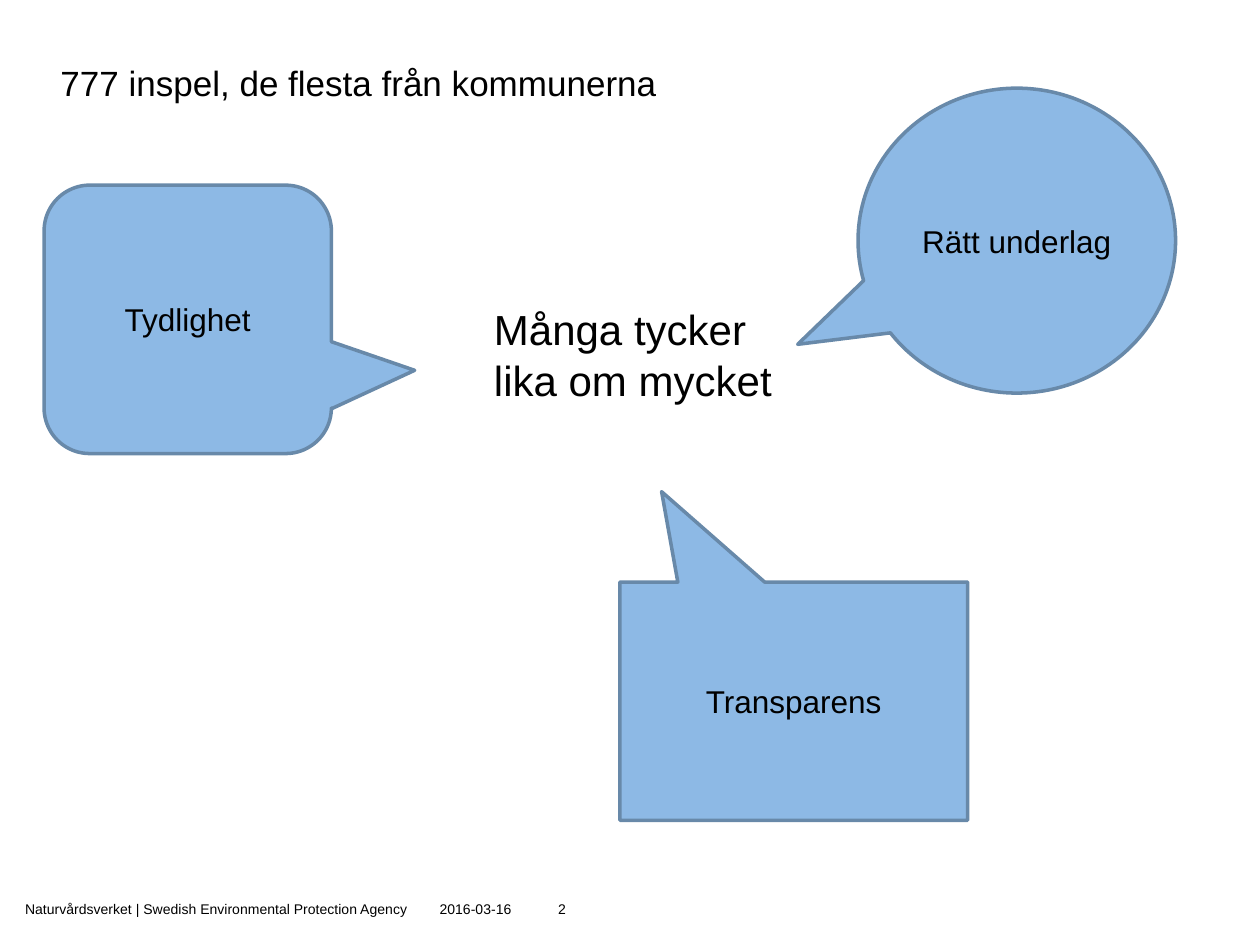
from pptx import Presentation
from pptx.dml.color import RGBColor
from pptx.enum.shapes import MSO_SHAPE
from pptx.enum.text import MSO_ANCHOR, MSO_AUTO_SIZE, PP_ALIGN
from pptx.util import Inches, Pt
from lxml.etree import SubElement
from pptx.oxml.ns import qn


def color(code):
    return RGBColor.from_string(code)


def write(shape, box, text, size, align=PP_ALIGN.LEFT, anchor=MSO_ANCHOR.MIDDLE):
    shape.left, shape.top, shape.width, shape.height = [Inches(v) for v in box]
    frame = shape.text_frame
    frame.text = text
    frame.word_wrap = True
    frame.auto_size = MSO_AUTO_SIZE.NONE
    frame.vertical_anchor = anchor
    para = frame.paragraphs[0]
    para.alignment = align
    para.space_before = Pt(0)
    font = para.runs[0].font
    font.name = "Arial"
    font.size = Pt(size)
    font.color.rgb = color("000000")


deck = Presentation()
deck.slide_width, deck.slide_height = Inches(10), Inches(7.5)
slide = deck.slides.add_slide(deck.slide_layouts[1])
shapes = slide.shapes

write(shapes.title, (0.38, 0.44, 5.63, 0.44),
      "777 inspel, de flesta från kommunerna", 20, anchor=MSO_ANCHOR.TOP)

body = slide.placeholders[1]
write(body, (3.82, 1.86, 2.52, 2.36), "Många tycker lika om mycket", 24,
      anchor=MSO_ANCHOR.TOP)
body.text_frame.margin_top = Inches(0.55)
props = body.text_frame.paragraphs[0]._p.get_or_add_pPr()
props.set("marL", "0")
props.set("indent", "0")
SubElement(props, qn("a:buNone"))

notes = [
    (0.1, 3.32, "Naturvårdsverket | Swedish Environmental Protection Agency", PP_ALIGN.LEFT),
    (3.39, 0.82, "2016-03-16", PP_ALIGN.LEFT),
    (4.2, 0.39, "2", PP_ALIGN.RIGHT),
]
for left, width, text, align in notes:
    write(shapes.add_textbox(0, 0, 0, 0), (left, 7.07, width, 0.28), text, 8, align)

calls = [
    (MSO_SHAPE.ROUNDED_RECTANGULAR_CALLOUT, (0.35, 1.47, 2.28, 2.13),
     (0.79, 0.19, 0.17), "Tydlighet"),
    (MSO_SHAPE.OVAL_CALLOUT, (6.81, 0.7, 2.52, 2.42), (-0.69, 0.34), "Rätt underlag"),
    (MSO_SHAPE.RECTANGULAR_CALLOUT, (4.92, 4.62, 2.76, 1.89),
     (-0.38, -0.88), "Transparens"),
]
for kind, box, tips, text in calls:
    call = shapes.add_shape(kind, 0, 0, 0, 0)
    write(call, box, text, 18, PP_ALIGN.CENTER)
    for i, tip in enumerate(tips):
        call.adjustments[i] = tip
    call.shadow.inherit = False
    call.fill.solid()
    call.fill.fore_color.rgb = color("8DB9E5")
    call.line.color.rgb = color("6889A9")
    call.line.width = Pt(2)

deck.save("out.pptx")
